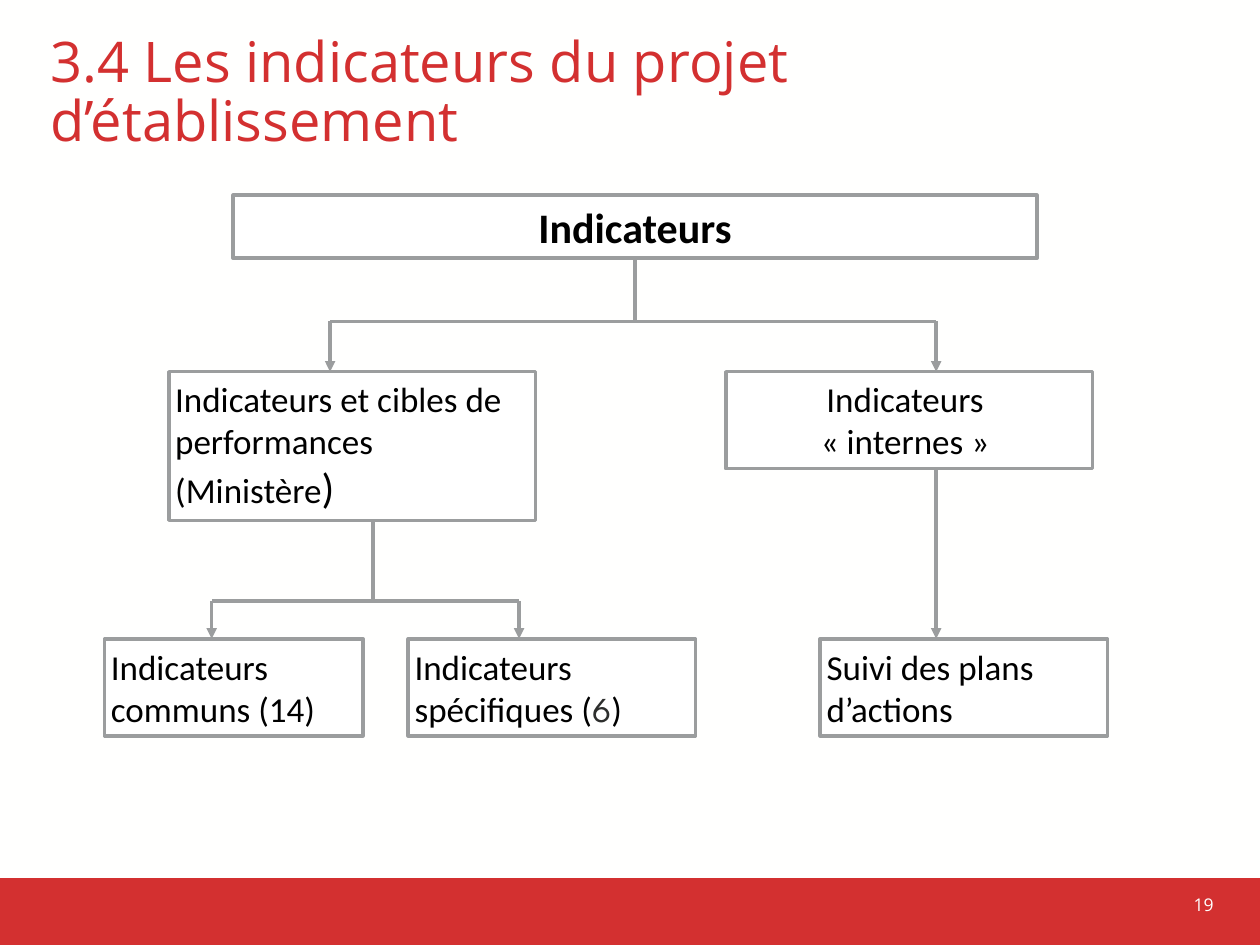
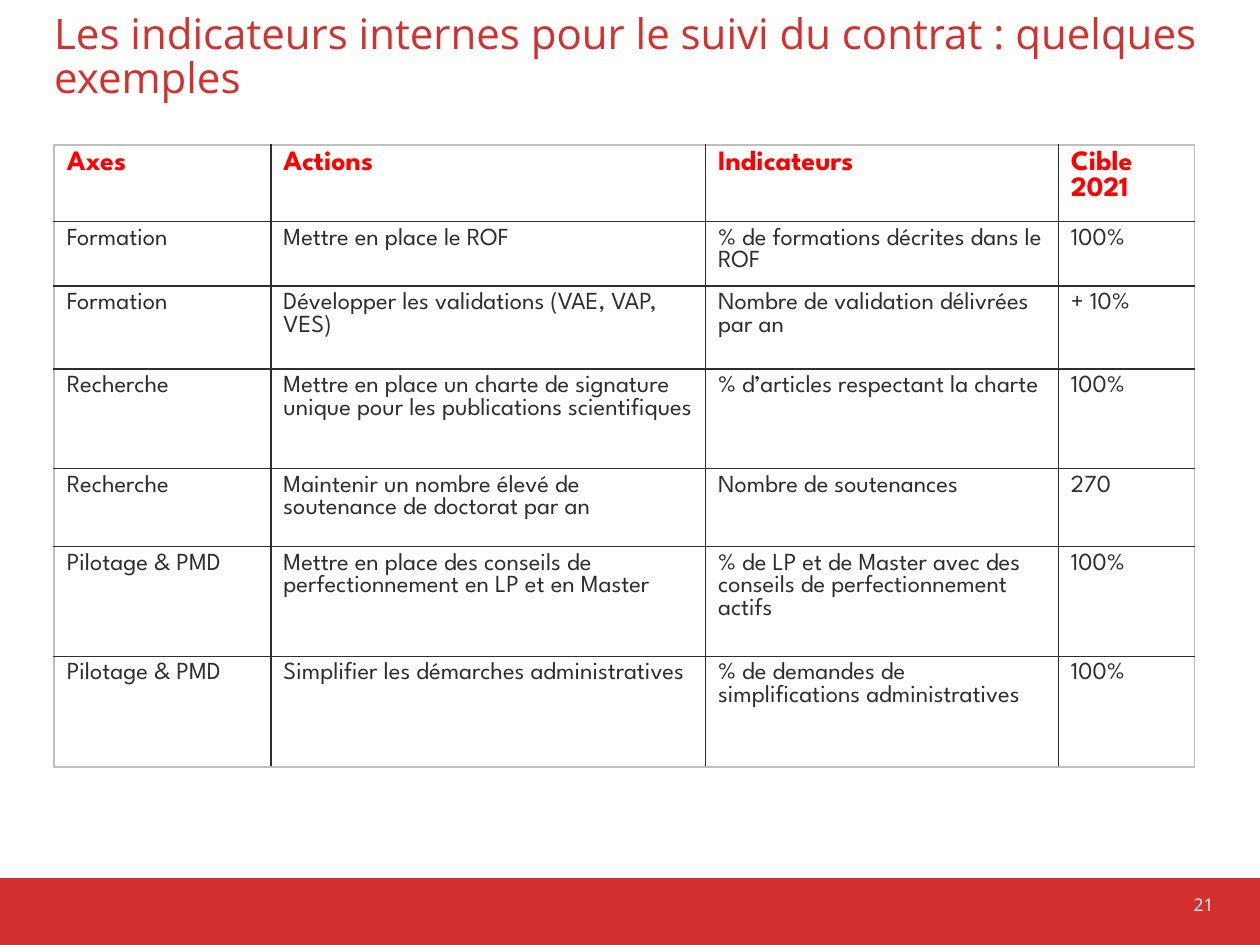
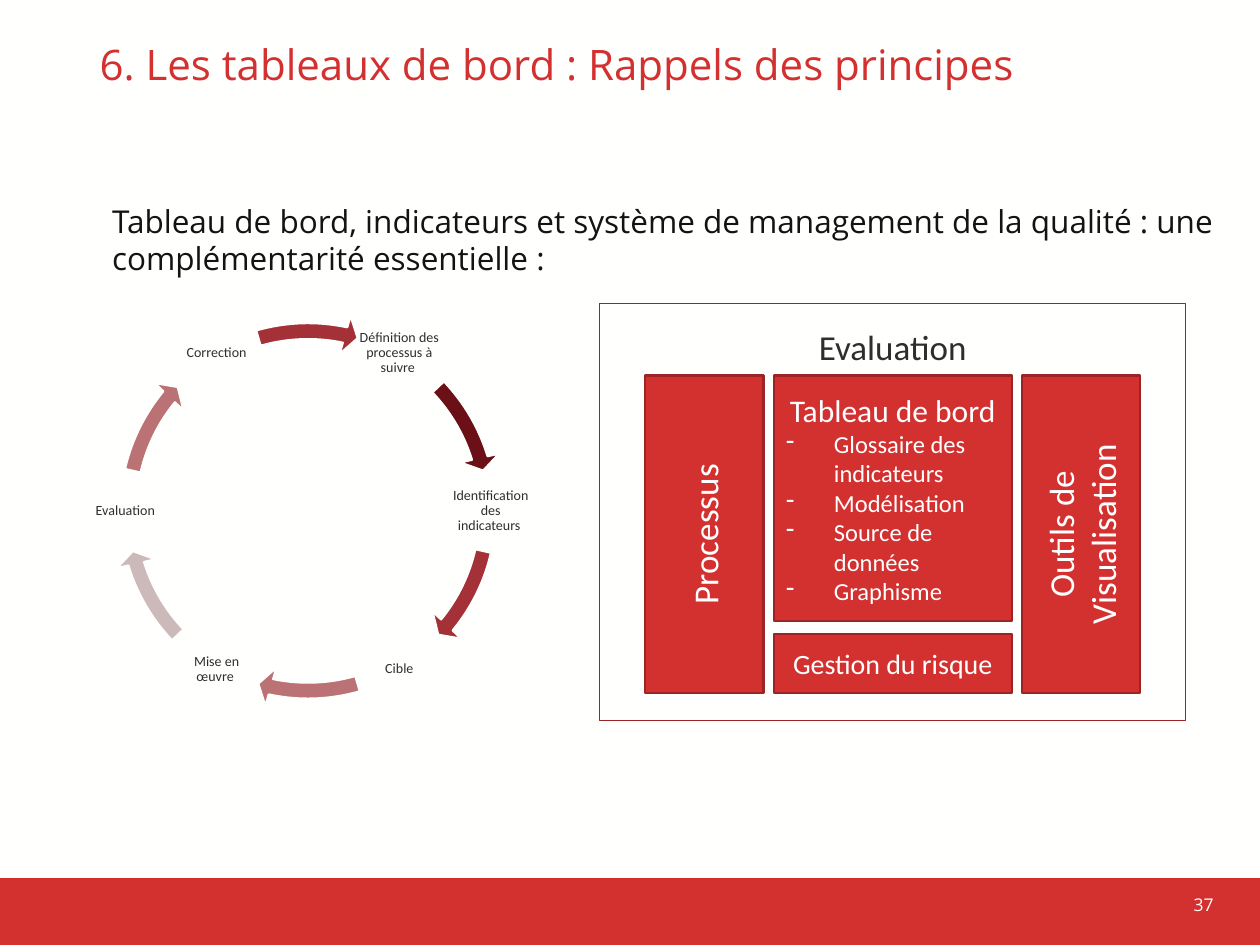
from dataclasses import dataclass
from math import cos, radians, sin

from lxml.etree import SubElement
from pptx import Presentation
from pptx.dml.color import RGBColor
from pptx.enum.shapes import MSO_CONNECTOR, MSO_SHAPE
from pptx.enum.text import MSO_ANCHOR, MSO_AUTO_SIZE, PP_ALIGN
from pptx.oxml.ns import qn
from pptx.util import Inches, Pt


@dataclass(frozen=True)
class Theme:
    red: str = "D33030"
    edge: str = "9C2424"
    paper: str = "FFFFFE"
    white: str = "FFFFFF"
    black: str = "000000"
    ink: str = "2D2E2D"
    body: str = "141313"
    grey: str = "9B9D9E"
    pale: str = "BFBFBF"
    head: str = "FF0000"
    sans: str = "Open Sans"
    text: str = "Calibri"
    grid: str = "League Spartan"
    big: int = 32
    title: int = 24
    label: int = 20
    lead: int = 18
    mid: int = 16
    small: int = 14
    note: int = 10
    tiny: int = 8


T = Theme()


def rgb(code):
    return RGBColor.from_string(code)


def area(box):
    return [Inches(n) for n in box]


def style(font, face, size, color, bold=False):
    font.name, font.size, font.bold = face, Pt(size), bold
    font.color.rgb = rgb(color)


def setup(frame, pad=(0.1, 0.05), anchor=MSO_ANCHOR.TOP):
    """Wrap the frame; pad holds the side and the top or bottom insets."""
    frame.word_wrap = True
    frame.auto_size = MSO_AUTO_SIZE.NONE
    frame.vertical_anchor = anchor
    frame.margin_left = frame.margin_right = Inches(pad[0])
    frame.margin_top = frame.margin_bottom = Inches(pad[1])


def write(frame, text, face, size, color, align=PP_ALIGN.LEFT, bold=False):
    for i, line in enumerate(text.split("\n")):
        para = frame.paragraphs[0] if i == 0 else frame.add_paragraph()
        para.text, para.alignment = line, align
        style(para.font, face, size, color, bold)


def indent(para, left, first, mark=None):
    props = para._p.get_or_add_pPr()
    props.set("marL", str(Inches(left)))
    props.set("indent", str(Inches(first)))
    if mark:
        SubElement(props, qn("a:buChar"), char=mark)
    else:
        SubElement(props, qn("a:buNone"))


def add_box(slide, box, fill, edge, width, kind=MSO_SHAPE.RECTANGLE):
    shape = slide.shapes.add_shape(kind, *area(box))
    shape.shadow.inherit = False
    if fill:
        shape.fill.solid()
        shape.fill.fore_color.rgb = rgb(fill)
    else:
        shape.fill.background()
    if edge:
        shape.line.color.rgb = rgb(edge)
        shape.line.width = Pt(width)
    else:
        shape.line.fill.background()
    return shape


def add_line(slide, start, end, arrow=False):
    line = slide.shapes.add_connector(
        MSO_CONNECTOR.STRAIGHT, *area(start + end))
    line.line.color.rgb = rgb(T.grey)
    line.line.width = Pt(2)
    props = line.element.spPr
    if arrow:
        SubElement(props.find(qn("a:ln")), qn("a:tailEnd"), type="triangle")
    SubElement(props, qn("a:effectLst"))


def add_band(deck, slide):
    """Move the red foot band into the master, so every slide shows it."""
    band = add_box(slide, (-0.12, 6.97, 10.24, 0.56), T.red, None, 0)
    deck.slide_master.shapes.element.append(band.element)


def start(deck, layout, title, box, size, number):
    """Add a slide with its title and page number."""
    slide = deck.slides.add_slide(deck.slide_layouts[layout])
    head = slide.shapes.title
    head.left, head.top, head.width, head.height = area(box)
    setup(head.text_frame, (0.1, 0.07))
    write(head.text_frame, title, T.sans, size, T.red)
    head.text_frame.paragraphs[0].line_spacing = 0.88
    page = slide.shapes.add_textbox(*area((8.39, 7.05, 1.34, 0.4)))
    setup(page.text_frame)
    write(page.text_frame, str(number), T.sans, T.note, T.paper,
          PP_ALIGN.RIGHT)
    return slide


def add_node(slide, box, text, size=T.label, align=PP_ALIGN.LEFT, bold=False):
    shape = add_box(slide, box, T.white, T.grey, 2)
    setup(shape.text_frame, (0.05, 0.05))
    write(shape.text_frame, text, T.text, size, T.black, align, bold)
    return shape.text_frame.paragraphs[0]


def add_fork(slide, x, top, bar, ends, foot):
    """Drop a trunk to a bar, then an arrow to the foot at each end."""
    add_line(slide, (x, top), (x, bar))
    for end in ends:
        add_line(slide, (x, bar), (end, bar))
        add_line(slide, (end, bar), (end, foot), True)


def add_tree(slide, box):
    x, y, w, h = box
    mid = PP_ALIGN.CENTER
    add_node(slide, (x + 1.02, y, 6.38, 0.5), "Indicateurs",
             T.title, mid, True)
    goal = add_node(slide, (x + 0.51, y + 1.4, 2.91, 1.18),
                    "Indicateurs et cibles de performances (Ministère")
    last = goal.add_run()
    last.text = ")"
    last.font.size = Pt(T.title)
    add_node(slide, (x + 4.93, y + 1.4, 2.91, 0.77),
             "Indicateurs \n«\u00a0internes\u00a0» ", align=mid)
    low = y + h - 0.77
    add_node(slide, (x, low, 2.05, 0.77), "Indicateurs communs (14)")
    own = add_node(slide, (x + 2.41, low, 2.28, 0.77),
                   "Indicateurs spécifiques (")
    count, close = own.add_run(), own.add_run()
    count.text, close.text = "6", ")"
    style(count.font, T.grid, T.label, T.ink)
    add_node(slide, (x + w - 2.28, low, 2.28, 0.77),
             "Suivi des plans d’actions")
    right = x + 6.6
    add_fork(slide, x + 4.21, y + 0.5, y + 1, (x + 1.79, right), y + 1.4)
    add_fork(slide, x + 2.13, y + 2.58, y + 3.22, (x + 0.85, x + 3.29), low)
    add_line(slide, (right, y + 2.18), (right, low), True)


ROWS = [
    ("Axes", "Actions", "Indicateurs", "Cible 2021"),
    ("Formation", "Mettre en place le ROF",
     "% de formations décrites dans le ROF", "100%"),
    ("Formation", "Développer les validations (VAE, VAP, VES)",
     "Nombre de validation délivrées par an", "+ 10%"),
    ("Recherche", "Mettre en place un charte de signature unique pour les "
     "publications scientifiques", "% d’articles respectant la charte",
     "100%"),
    ("Recherche", "Maintenir un nombre élevé de soutenance de doctorat par an",
     "Nombre de soutenances", "270"),
    ("Pilotage & PMD", "Mettre en place des conseils de perfectionnement en "
     "LP et en Master", "% de LP et de Master avec des conseils de "
     "perfectionnement actifs", "100%"),
    ("Pilotage & PMD", "Simplifier les démarches administratives",
     "% de demandes de simplifications administratives", "100%"),
]
WIDE = (1.72, 3.45, 2.8, 1.08)
HIGH = (0.61, 0.51, 0.66, 0.79, 0.62, 0.87, 0.88)


def set_edges(cell, outer):
    """Rule all four sides, paler on the sides named in outer."""
    props = cell._tc.get_or_add_tcPr()
    for i, side in enumerate("LRTB"):
        line = SubElement(props, qn(f"a:ln{side}"), w=str(Pt(1)))
        fill = SubElement(line, qn("a:solidFill"))
        SubElement(fill, qn("a:srgbClr"),
                   val=T.pale if side in outer else T.ink)


def add_grid(slide, box):
    grid = slide.shapes.add_table(len(ROWS), len(WIDE), *area(box)).table
    grid.first_row = grid.horz_banding = False
    for col, w in zip(grid.columns, WIDE):
        col.width = Inches(w)
    for r, (row, h) in enumerate(zip(ROWS, HIGH)):
        grid.rows[r].height = Inches(h)
        look = (T.mid, T.head) if r == 0 else (T.small, T.ink)
        for c, text in enumerate(row):
            cell = grid.cell(r, c)
            tests = {"L": c == 0, "R": c == len(WIDE) - 1,
                     "T": r == 0, "B": r == len(ROWS) - 1}
            set_edges(cell, [side for side, hit in tests.items() if hit])
            cell.fill.background()
            write(cell.text_frame, text, T.grid, *look, bold=r == 0)


STEPS = ["Définition des processus à suivre ", "Identification des indicateurs ",
         "Cible", "Mise en œuvre ", "Evaluation", "Correction"]
TINTS = ["6C1017", "A43137", "BB7275", "CCBABA", "BB7275", "A43137"]
ARCS = [(316.4, 342.9), (12.9, 39.4), (74, 101.9)]


def add_cycle(slide, box):
    """Set six steps on a ring; the lower arcs are the upper, half turned."""
    x, y, w, h = box
    ring, side = 1.45, 0.65
    arcs = ARCS + [tuple((a + 180) % 360 for a in arc) for arc in ARCS]
    for i, (step, tint, (first, last)) in enumerate(zip(STEPS, TINTS, arcs)):
        turn = radians(60 * i - 60)
        left = x + w / 2 + ring * cos(turn) - side / 2
        top = y + h / 2 + ring * sin(turn) - side / 2
        label = slide.shapes.add_textbox(*area((left, top, side, side)))
        setup(label.text_frame, (0.01, 0.01), MSO_ANCHOR.MIDDLE)
        write(label.text_frame, step, T.text, T.tiny, T.ink, PP_ALIGN.CENTER)
        label.text_frame.paragraphs[0].line_spacing = 0.9
        arrow = add_box(slide, box, tint, T.paper, 1.25,
                        MSO_SHAPE.CIRCULAR_ARROW)
        # Angles count 60000 to the degree, adjustments 100000 to the unit.
        for k, value in enumerate((0.04, 2.5, last * 0.6, first * 0.6, 0.05)):
            arrow.adjustments[k] = value


def add_tile(slide, box, text, size, upright=False):
    tile = add_box(slide, box, T.red, T.edge, 1.25)
    setup(tile.text_frame, anchor=MSO_ANCHOR.MIDDLE)
    if upright:
        tile.element.txBody.find(qn("a:bodyPr")).set("vert", "vert270")
    write(tile.text_frame, text, T.text, size, T.white, PP_ALIGN.CENTER)
    return tile.text_frame


def add_panel(slide, box):
    x, y, w, h = box
    frame = add_box(slide, box, None, T.edge, 0.5)
    setup(frame.text_frame, (0.1, 0.17))
    write(frame.text_frame, "Evaluation", T.text, T.label, T.ink,
          PP_ALIGN.CENTER)
    side, core, gap, tall, risk = 0.94, 1.89, 0.08, 2.52, 0.47
    left, top = x + 0.36, y + 0.57
    mid = left + side + gap
    add_tile(slide, (left, top, side, tall), "Processus", T.label, True)
    board = add_tile(slide, (mid, top, core, tall - risk - 0.1),
                     "Tableau de bord", T.lead)
    for item in ("Glossaire des indicateurs", "Modélisation",
                 "Source de données", "Graphisme"):
        para = board.add_paragraph()
        para.text, para.alignment = item, PP_ALIGN.LEFT
        indent(para, 0.38, -0.38, "-")
        style(para.font, T.text, T.small, T.white)
    add_tile(slide, (mid + core + gap, top, side, tall),
             "Outils de Visualisation", T.label, True)
    add_tile(slide, (mid, top + tall - risk, core, risk),
             "Gestion du risque", T.mid)


def add_intro(slide, box, text):
    body = slide.placeholders[1]
    body.left, body.top, body.width, body.height = area(box)
    setup(body.text_frame)
    para = body.text_frame.paragraphs[0]
    indent(para, 0.2, 0)
    write(body.text_frame, text, T.sans, T.lead, T.body)
    para.line_spacing, para.space_before = 0.98, Pt(0)


def main():
    deck = Presentation()
    deck.slide_width, deck.slide_height = Inches(10), Inches(7.5)
    back = deck.slide_master.background.fill
    back.solid()
    back.fore_color.rgb = rgb(T.paper)

    tree = start(deck, 5, "3.4 Les indicateurs du projet d’établissement",
                 (0.3, 0.21, 9.36, 0.86), T.big, 19)
    add_band(deck, tree)
    add_tree(tree, (0.83, 1.55, 7.96, 4.29))

    grid = start(deck, 5, "Les indicateurs internes pour le suivi du contrat "
                 ": quelques exemples", (0.33, 0.04, 9.36, 0.86), T.title, 21)
    add_grid(grid, (0.43, 1.15, sum(WIDE), sum(HIGH)))

    board = start(deck, 1, "6. Les tableaux de bord : Rappels des principes",
                  (0.69, 0.29, 8.79, 0.86), T.title, 37)
    add_intro(board, (0.59, 1.57, 9.21, 1.01),
              "Tableau de bord, indicateurs et système de management de la "
              "qualité : une complémentarité essentielle :")
    add_cycle(board, (0.86, 2.47, 3.17, 3.17))
    add_panel(board, (4.76, 2.41, 4.65, 3.31))
    deck.save("out.pptx")


if __name__ == "__main__":
    main()
